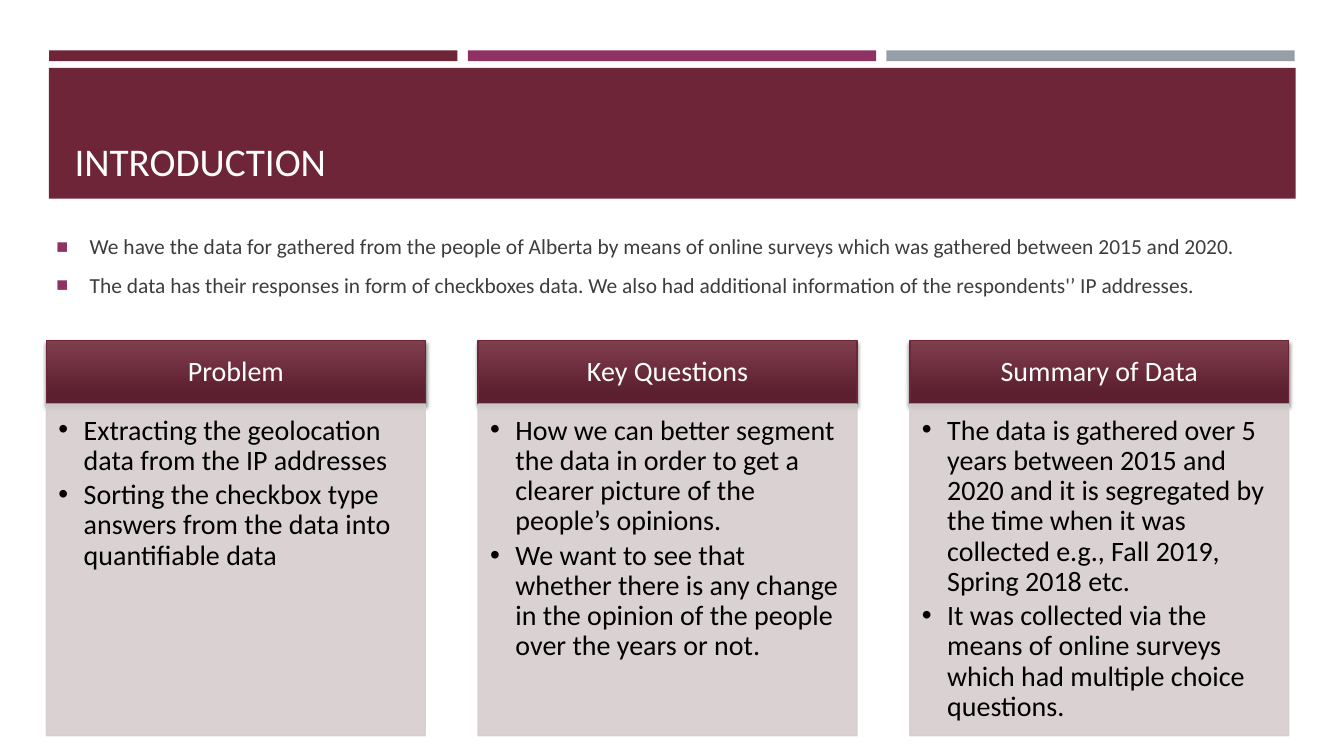
from dataclasses import dataclass

from lxml.etree import SubElement
from pptx import Presentation
from pptx.dml.color import RGBColor
from pptx.enum.shapes import MSO_SHAPE
from pptx.enum.text import MSO_ANCHOR, PP_ALIGN
from pptx.oxml.ns import qn
from pptx.util import Cm, Pt


@dataclass(frozen=True)
class Theme:
    font: str = "Calibri"
    wine: str = "6E2538"
    plum: str = "903163"
    steel: str = "969FA7"
    light: str = "7F3E4C"
    dark: str = "5C1F2F"
    panel: str = "D5CDCE"
    white: str = "FFFFFF"
    black: str = "000000"
    gray: str = "3D3D3D"
    title: float = 28
    intro: float = 15.3
    card: float = 20


THEME = Theme()

INTRO = [
    "We have the data for gathered from the people of Alberta by means of online surveys which was gathered between 2015 and 2020.",
    "The data has their responses in form of checkboxes data. We also had additional information of the respondents'’ IP addresses.",
]

CARDS = [
    ("Problem", [
        "Extracting the geolocation data from the IP addresses",
        "Sorting the checkbox type answers from the data into quantifiable data",
    ]),
    ("Key Questions", [
        "How we can better segment the data in order to get a clearer picture of the people’s opinions.",
        "We want to see that whether there is any change in the opinion of the people over the years or not.",
    ]),
    ("Summary of Data", [
        "The data is gathered over 5 years between 2015 and 2020 and it is segregated by the time when it was collected e.g., Fall 2019, Spring 2018 etc.",
        "It was collected via the means of online surveys which had multiple choice questions.",
    ]),
]


def rgb(code):
    return RGBColor.from_string(code)


def add_node(parent, tag, **attrs):
    return SubElement(parent, qn(tag), {key: str(val) for key, val in attrs.items()})


def add_rect(slide, box, fill, line=None):
    rect = slide.shapes.add_shape(MSO_SHAPE.RECTANGLE, *map(Cm, box))
    rect.shadow.inherit = False
    rect.fill.solid()
    rect.fill.fore_color.rgb = rgb(fill)
    if line:
        rect.line.color.rgb = rgb(line)
        rect.line.width = Pt(1)
    else:
        rect.line.fill.background()
    return rect


def add_box(slide, box):
    return slide.shapes.add_textbox(*map(Cm, box))


def set_frame(shape, anchor, insets=(0.25, 0.13, 0.25, 0.13)):
    frame = shape.text_frame
    frame.word_wrap = True
    frame.vertical_anchor = anchor
    (frame.margin_left, frame.margin_top,
     frame.margin_right, frame.margin_bottom) = map(Cm, insets)
    return frame


def write(frame, lines, size, color, align=PP_ALIGN.LEFT, space=1, before=0, after=0):
    for num, line in enumerate(lines):
        para = frame.add_paragraph() if num else frame.paragraphs[0]
        para.alignment = align
        para.line_spacing = space
        para.space_before = Pt(before)
        para.space_after = Pt(after)
        run = para.add_run()
        run.text = line
        run.font.name = THEME.font
        run.font.size = Pt(size)
        run.font.color.rgb = rgb(color)


def add_marks(frame, mark, indent, color, scale=100):
    for para in frame.paragraphs:
        props = para._p.get_or_add_pPr()
        props.set("marL", str(Cm(indent)))
        props.set("indent", str(-Cm(indent)))
        add_node(add_node(props, "a:buClr"), "a:srgbClr", val=color)
        add_node(props, "a:buSzPct", val=scale * 1000)
        add_node(props, "a:buFont", typeface="Arial")
        add_node(props, "a:buChar", char=mark)


def add_shade(shape):
    effects = shape._element.spPr.find(qn("a:effectLst"))
    shade = add_node(effects, "a:outerShdw", blurRad=Pt(3), dist=Pt(2),
                     dir=5400000, rotWithShape=0)
    tint = add_node(shade, "a:srgbClr", val=THEME.black)
    add_node(tint, "a:alpha", val=55000)


def add_head(slide, box, label):
    head = add_rect(slide, box, THEME.wine, THEME.wine)
    head.fill.gradient()
    head.fill.gradient_angle = 270
    stops = zip(head.fill.gradient_stops, (THEME.light, THEME.dark), (0, 0.84))
    for stop, color, place in stops:
        stop.color.rgb = rgb(color)
        stop.position = place
    add_shade(head)
    frame = set_frame(head, MSO_ANCHOR.MIDDLE, (0.4, 0.23, 0.4, 0.23))
    write(frame, [label], THEME.card, THEME.white, PP_ALIGN.CENTER, space=0.9)


def add_panel(slide, box, points):
    panel = add_rect(slide, box, THEME.panel, THEME.panel)
    for tint in list(panel._element.spPr.iter(qn("a:srgbClr"))):
        add_node(tint, "a:alpha", val=90000)
    frame = set_frame(panel, MSO_ANCHOR.TOP, (0.3, 0.3, 0.4, 0.43))
    write(frame, points, THEME.card, THEME.black, space=0.9, after=3)
    add_marks(frame, "•", 0.64, THEME.black)


def add_top(slide):
    for num, color in enumerate((THEME.wine, THEME.plum, THEME.steel)):
        add_rect(slide, (1.24 + num * 10.55, 1.27, 10.29, 0.27), color)
    add_rect(slide, (1.23, 1.71, 31.42, 3.3), THEME.wine)
    title = add_box(slide, (1.63, 1.96, 30.63, 2.82))
    frame = set_frame(title, MSO_ANCHOR.BOTTOM)
    write(frame, ["INTRODUCTION"], THEME.title, THEME.white)


def add_intro(slide):
    intro = add_box(slide, (1.17, 5.28, 31.32, 2.82))
    frame = set_frame(intro, MSO_ANCHOR.MIDDLE)
    write(frame, INTRO, THEME.intro, THEME.gray, before=3, after=6)
    add_marks(frame, "■", 0.84, THEME.plum, 92)


def add_cards(slide):
    for num, (label, points) in enumerate(CARDS):
        left = 1.17 + num * 10.88
        add_head(slide, (left, 8.58, 9.55, 1.6), label)
        add_panel(slide, (left, 10.18, 9.55, 8.36), points)


def main():
    deck = Presentation()
    deck.slide_width = Cm(33.87)
    deck.slide_height = Cm(19.05)
    slide = deck.slides.add_slide(deck.slide_layouts[6])
    add_top(slide)
    add_intro(slide)
    add_cards(slide)
    deck.save("out.pptx")


if __name__ == "__main__":
    main()
